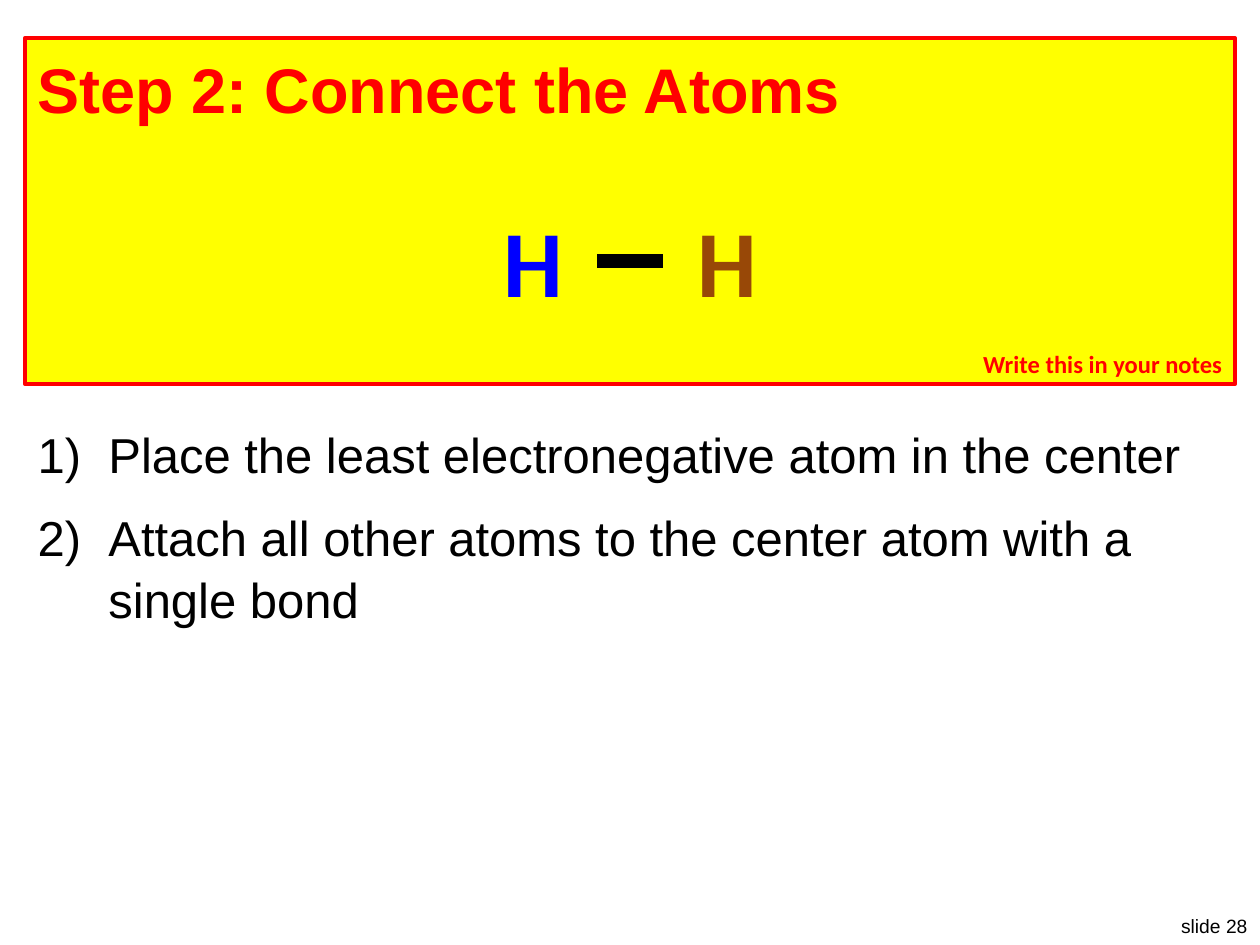
from pptx import Presentation
from pptx.dml.color import RGBColor
from pptx.enum import shapes, text
from pptx.oxml.ns import qn
from pptx.util import Pt

COLORS = {
    "yellow": "FFFF00",
    "red": "FF0000",
    "blue": "0000FF",
    "brown": "984807",
    "black": "000000",
}


class Deck:
    def __init__(self, width, height):
        self.presentation = Presentation()
        self.presentation.slide_width = Pt(width)
        self.presentation.slide_height = Pt(height)
        self.slide = self.presentation.slides.add_slide(self.presentation.slide_layouts[6])

    def color(self, name):
        return RGBColor.from_string(COLORS[name])

    def fill_text(self, frame, lines, size, color, font="Arial", bold=False,
                  align="LEFT", anchor="TOP", wrap=True):
        frame.text = "\n".join(lines)
        frame.word_wrap = wrap
        frame.vertical_anchor = text.MSO_ANCHOR[anchor]
        for paragraph in frame.paragraphs:
            paragraph.alignment = text.PP_ALIGN[align]
            for run in paragraph.runs:
                run.font.name = font
                run.font.size = Pt(size)
                run.font.bold = bold
                run.font.color.rgb = self.color(color)

    def panel(self, box, note, fill, accent):
        panel = self.slide.shapes.add_shape(shapes.MSO_SHAPE.RECTANGLE, *map(Pt, box))
        panel.shadow.inherit = False
        panel.fill.solid()
        panel.fill.fore_color.rgb = self.color(fill)
        panel.line.color.rgb = self.color(accent)
        panel.line.width = Pt(2.25)
        self.fill_text(panel.text_frame, [note], 14, accent, "Calibri", True, "RIGHT", "BOTTOM")

    def label(self, box, lines, size, color, inset=True, **style):
        frame = self.slide.shapes.add_textbox(*map(Pt, box)).text_frame
        if not inset:
            frame.margin_left = frame.margin_right = 0
            frame.margin_top = frame.margin_bottom = 0
        self.fill_text(frame, lines, size, color, **style)
        return frame

    def numbered(self, box, lines, size, indent):
        frame = self.label(box, lines, size, "black")
        for index, paragraph in enumerate(frame.paragraphs):
            paragraph.line_spacing = 1.05
            paragraph.space_before = Pt(12 if index else 0)
            properties = paragraph._p.get_or_add_pPr()
            properties.set("marL", str(Pt(indent)))
            properties.set("indent", str(-Pt(indent)))
            number = properties.makeelement(qn("a:buAutoNum"), {"type": "arabicParenR"})
            properties.append(number)

    def bond(self, left, right, y):
        bond = self.slide.shapes.add_connector(
            shapes.MSO_CONNECTOR.STRAIGHT, Pt(left), Pt(y), Pt(right), Pt(y))
        bond.line.color.rgb = self.color("black")
        bond.line.width = Pt(8)
        properties = bond._element.spPr
        properties.append(properties.makeelement(qn("a:effectLst"), {}))


def main():
    deck = Deck(720, 540)
    margin, width, center = 14.4, 691.2, 360

    deck.label((666, 519, 54, 21), ["slide 28"], 11, "black", align="RIGHT", wrap=False)
    deck.panel((margin, 21.6, width, 198), "Write this in your notes", "yellow", "red")
    deck.label((margin, 21.6, width, 57.6), ["Step 2: Connect the Atoms"], 36, "red",
               bold=True, anchor="MIDDLE")
    deck.numbered((margin, 237.6, width, 284.4), [
        "Place the least electronegative atom in the center",
        "Attach all other atoms to the center atom with a single bond",
    ], 28, 40.5)

    atom_width, atom_offset = 34.6, 55.5
    for side, color in ((1, "brown"), (-1, "blue")):
        left = center + side * atom_offset - atom_width / 2
        deck.label((left, 116, atom_width, 65.5), ["H"], 54, color, inset=False,
                   font="Calibri", bold=True, align="CENTER", wrap=False)
    deck.bond(center - 18.75, center + 18.75, 149)

    deck.presentation.save("out.pptx")


if __name__ == "__main__":
    main()
